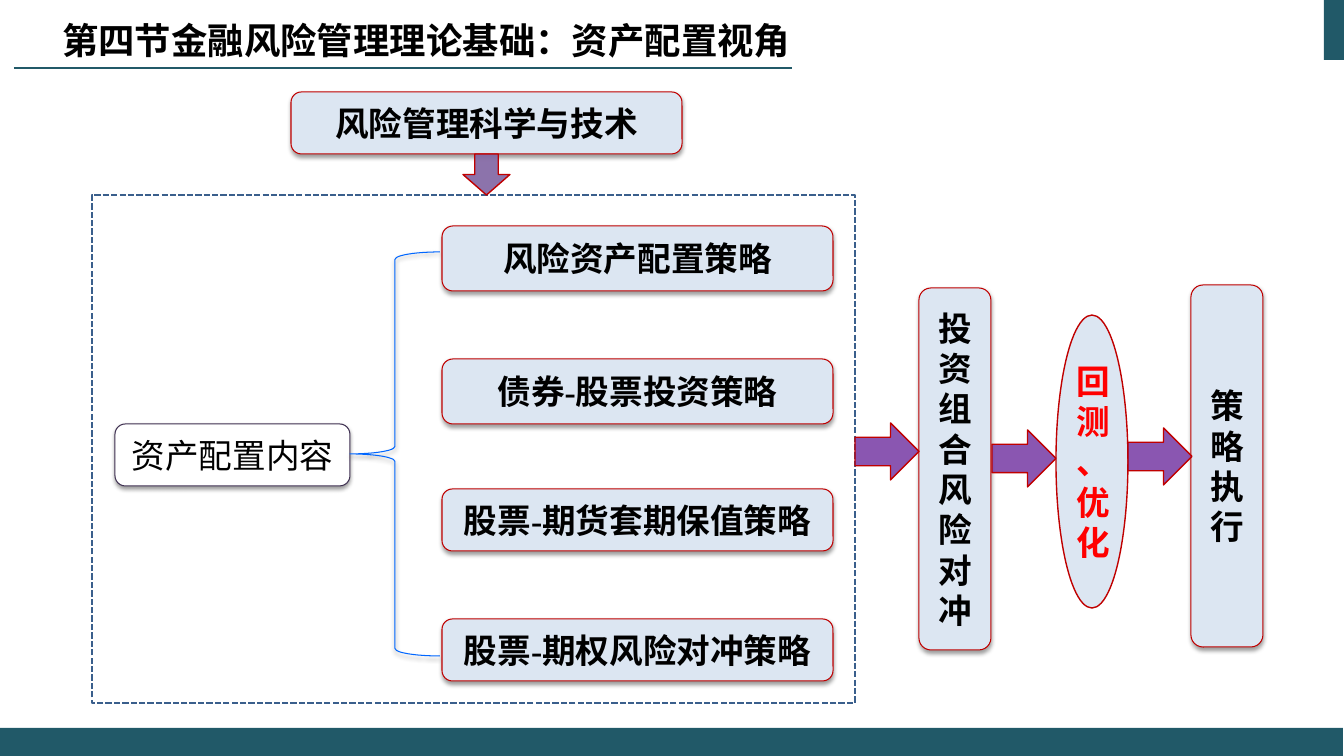
import pptx
import pptx.dml.color
import pptx.enum.dml
import pptx.enum.shapes
import pptx.enum.text
import pptx.oxml
import pptx.oxml.ns
import pptx.util

KIND = pptx.enum.shapes.MSO_SHAPE
ALIGN = pptx.enum.text.PP_ALIGN
ANCHOR = pptx.enum.text.MSO_ANCHOR
TEAL, RED, PALE, BLACK = "215968", "C00000", "DCE6F2", "000000"
SERIF, SANS, CJK = "Times New Roman", "Calibri", "Noto Sans CJK SC"


def px(n):
    return pptx.util.Emu(round(n * 914400 / 100.8))


def color(code):
    return pptx.dml.color.RGBColor.from_string(code)


def add_xml(parent, xml):
    space = pptx.oxml.ns.nsdecls("a")
    parent.append(pptx.oxml.parse_xml(xml.replace(" ", f" {space} ", 1)))


def write(shape, text, font=SERIF, size=24, bold=True, ink=BLACK,
          align=ALIGN.CENTER, anchor=ANCHOR.MIDDLE):
    frame = shape.text_frame
    frame.word_wrap = True
    frame.vertical_anchor = anchor
    par = frame.paragraphs[0]
    par.alignment = align
    run = par.add_run()
    run.text = text
    run.font.name = font
    run.font.size = pptx.util.Pt(size)
    run.font.bold = bold
    run.font.color.rgb = color(ink)
    add_xml(run.font._element, f'<a:ea typeface="{CJK}"/>')


class Board:
    def __init__(self):
        self.deck = pptx.Presentation()
        self.deck.slide_width, self.deck.slide_height = px(1344), px(756)
        self.slide = self.deck.slides.add_slide(self.deck.slide_layouts[5])

    def shape(self, kind, box, fill=None, line=None, width=1, alpha=None):
        item = self.slide.shapes.add_shape(kind, *map(px, box))
        item.shadow.inherit = False
        if fill:
            item.fill.solid()
            item.fill.fore_color.rgb = color(fill)
            if alpha:
                tint = item.fill._xPr.solidFill[0]
                add_xml(tint, f'<a:alpha val="{alpha * 1000}"/>')
        else:
            item.fill.background()
        if line:
            item.line.color.rgb = color(line)
            item.line.width = pptx.util.Pt(width)
        else:
            item.line.fill.background()
        return item

    def shade(self, item):
        effect = item._element.spPr.find(pptx.oxml.ns.qn("a:effectLst"))
        add_xml(effect, '<a:outerShdw blurRad="40000" dist="20000" dir="5400000" rotWithShape="0">'
                '<a:srgbClr val="000000"><a:alpha val="38000"/></a:srgbClr></a:outerShdw>')

    def card(self, text, box, fill=PALE, line=RED, **style):
        item = self.shape(KIND.ROUNDED_RECTANGLE, box, fill, line, 0.75)
        self.shade(item)
        write(item, text, **style)

    def brace(self, box):
        self.shade(self.shape(KIND.LEFT_BRACE, box, line="0066FF", width=0.75))

    def frame(self, box):
        item = self.shape(KIND.RECTANGLE, box, line="3A5F8C", width=1.5)
        item.line.dash_style = pptx.enum.dml.MSO_LINE.SQUARE_DOT

    def rule(self, left, right, y):
        item = self.slide.shapes.add_connector(
            pptx.enum.shapes.MSO_CONNECTOR.STRAIGHT, px(left), px(y), px(right), px(y))
        item.line.color.rgb = color(TEAL)
        item.line.width = pptx.util.Pt(1.5)
        add_xml(item._element.spPr, "<a:effectLst />")

    def title(self, text, box):
        item = self.slide.shapes.title
        item.left, item.top, item.width, item.height = map(px, box)
        write(item, text, font=CJK, size=26, align=ALIGN.LEFT, anchor=ANCHOR.TOP)
        item.text_frame.auto_size = pptx.enum.text.MSO_AUTO_SIZE.SHAPE_TO_FIT_TEXT


def main():
    board = Board()
    board.shape(KIND.RECTANGLE, (1324, 0, 20, 60), TEAL)
    board.rule(14, 792, 68)
    board.shape(KIND.RECTANGLE, (0, 728, 1343, 28), TEAL)
    board.title("第四节金融风险管理理论基础：资产配置视角", (52, 13, 809, 54))

    board.frame((92, 195, 763, 508))
    board.card("资产配置内容", (115, 424, 235, 62), "FFFFFF", "403152", bold=False)
    board.brace((350, 252, 90, 404))
    plans = (("风险资产配置策略", 226, 65), ("债券-股票投资策略", 359, 65),
             ("股票-期货套期保值策略", 489, 62), ("股票-期权风险对冲策略", 619, 62))
    for text, top, high in plans:
        board.card(text, (442, top, 391, high))

    board.card("风险管理科学与技术", (291, 92, 391, 62), font=SANS)
    board.shape(KIND.DOWN_ARROW, (463, 154, 47, 41), "8064A2", RED, alpha=90)

    for text, left, top in (("投资组合风险对冲", 919, 288), ("策略执行", 1191, 285)):
        board.card(text, (left, top, 72, 362), font=SANS)
    test = board.shape(KIND.OVAL, (1056, 315, 72, 293), PALE, RED)
    write(test, "回测、优化", font=SANS, ink="FF0000")
    for left, top in ((855, 423), (992, 430), (1128, 428)):
        board.shape(KIND.RIGHT_ARROW, (left, top, 64, 57), "7030A0", RED, alpha=81)

    board.deck.save("out.pptx")


if __name__ == "__main__":
    main()
